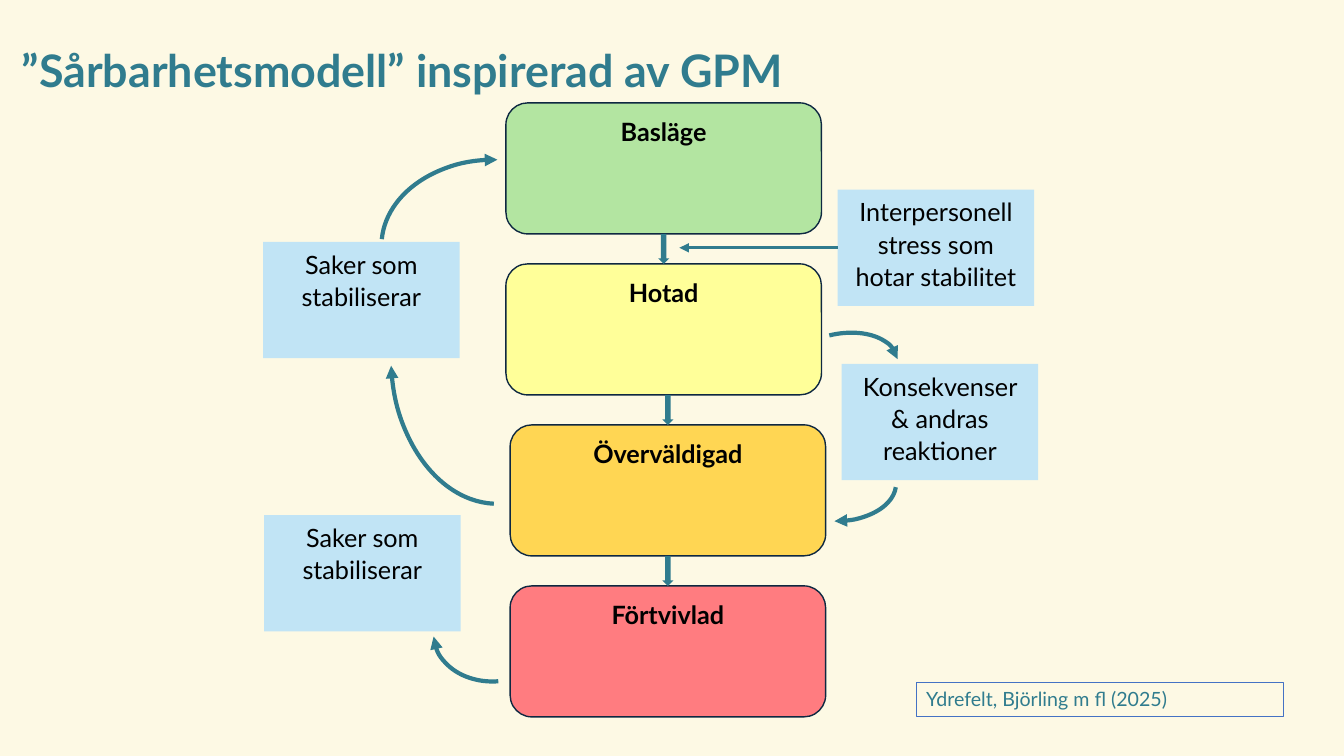
from pptx import Presentation
from pptx.dml.color import RGBColor as Rgb
from pptx.enum.shapes import MSO_CONNECTOR as Conn, MSO_SHAPE as Kind
from pptx.enum.text import MSO_ANCHOR as Anchor, PP_ALIGN as Align
from pptx.oxml.ns import qn
from pptx.util import Pt
from lxml.etree import SubElement as Sub

HUES = {
    "paper": "FDF9E4", "teal": "307C8E", "navy": "0E2841", "black": "000000",
    "green": "B3E5A1", "yellow": "FFFF99", "amber": "FFD653", "red": "FF7C80",
    "sky": "C1E4F5", "blue": "4472C4",
}
STAGES = [
    ("Basläge", "green", 361.4), ("Hotad", "yellow", 361.4),
    ("Överväldigad", "amber", 364.4), ("Förtvivlad", "red", 364.4),
]
NOTES = [
    ("Konsekvenser & andras reaktioner", 601.2, 260),
    ("Saker som stabiliserar", 188.6, 368),
    ("Saker som stabiliserar", 187.9, 172.8),
]
ARCS = [
    (279.4, 158.4, 146.2, 201.6, 356.7), (309.6, 415.4, 88.6, 71.3, 353.6),
    (553.7, 239, 88.6, 55.4, 165), (292.3, 94.3, 122.4, 162, 90),
    (570.2, 302.4, 53.3, 86.4, 270),
]


def hue(name):
    """Return the named colour."""
    return Rgb.from_string(HUES[name])


def write(shape, text, size, tone, bold=False, align=Align.LEFT, space=1, after=0):
    """Put one styled paragraph into a shape."""
    frame = shape.text_frame
    frame.word_wrap = True
    frame.vertical_anchor = Anchor.TOP
    para = frame.paragraphs[0]
    para.alignment, para.line_spacing, para.space_after = align, space, Pt(after)
    run = para.add_run()
    run.text = text
    font = run.font
    font.name, font.size, font.bold = "Lato", Pt(size), bold
    font.color.rgb = hue(tone)


def block(slide, kind, box, fill=None, line=None, width=1):
    """Draw a preset shape in a box."""
    shape = slide.shapes.add_shape(kind, *map(Pt, box))
    shape.shadow.inherit = False
    if fill:
        shape.fill.solid()
        shape.fill.fore_color.rgb = hue(fill)
    else:
        shape.fill.background()
    if line:
        shape.line.color.rgb = hue(line)
        shape.line.width = Pt(width)
    else:
        shape.line.fill.background()
    return shape


def tip(shape):
    """Add an arrowhead at the end of a line."""
    Sub(shape.element.spPr.find(qn("a:ln")), qn("a:tailEnd"), type="triangle")


def title(slide, box):
    """Draw the heading."""
    shape = slide.shapes.add_textbox(*map(Pt, box))
    write(shape, "”Sårbarhetsmodell” inspirerad av GPM", 32, "teal", True, space=1.1)


def stack(slide, top, wide, high, pitch):
    """Draw the stages with a down arrow between each pair."""
    for i, (text, fill, left) in enumerate(STAGES):
        y = top + i * pitch
        shape = block(slide, Kind.ROUNDED_RECTANGLE, (left, y, wide, high), fill, "navy")
        write(shape, text, 18, "black", True, Align.CENTER, 1.07, 8)
        if i:
            gap = pitch - high
            block(slide, Kind.DOWN_ARROW, (left + wide / 2 - 4, y - gap, 8, gap), "teal")


def note(slide, text, left, top):
    """Draw a pale note."""
    shape = block(slide, Kind.RECTANGLE, (left, top, 140.4, 83), "sky")
    write(shape, text, 18, "black", align=Align.CENTER, space=1.07, after=8)
    return shape


def stress(slide, left, top, end):
    """Draw the stress note and its arrow towards the stack."""
    shape = note(slide, "Interpersonell stress som hotar stabilitet", left, top)
    mid = Pt(top + 41.5)
    line = slide.shapes.add_connector(Conn.STRAIGHT, Pt(left), mid, Pt(end), mid)
    line.begin_connect(shape, 1)
    line.line.color.rgb = hue("teal")
    line.line.width = Pt(2.25)
    tip(line)
    Sub(line.element.spPr, qn("a:effectLst"))


def curve(slide, box, turn):
    """Draw a quarter arc with an arrowhead, turned by an angle."""
    shape = block(slide, Kind.ARC, box, line="teal", width=3)
    shape.adjustments[0], shape.adjustments[1] = 55.88, 109
    shape.rotation = turn
    tip(shape)


def source(slide, box):
    """Draw the framed citation."""
    shape = block(slide, Kind.RECTANGLE, box, line="blue", width=0.75)
    write(shape, "Ydrefelt, Björling m fl (2025)", 14, "teal")


def main():
    """Build and save the slide."""
    deck = Presentation()
    deck.slide_width, deck.slide_height = Pt(960), Pt(540)
    slide = deck.slides.add_slide(deck.slide_layouts[6])
    slide.background.fill.solid()
    slide.background.fill.fore_color.rgb = hue("paper")
    title(slide, (8.6, 23, 888.5, 49))
    stack(slide, 73.5, 225.4, 93.6, 115)
    stress(slide, 598.3, 135.5, 485.3)
    for text, left, top in NOTES:
        note(slide, text, left, top)
    for *box, turn in ARCS:
        curve(slide, box, turn)
    source(slide, (654.5, 487.4, 262, 24.5))
    deck.save("out.pptx")


if __name__ == "__main__":
    main()
